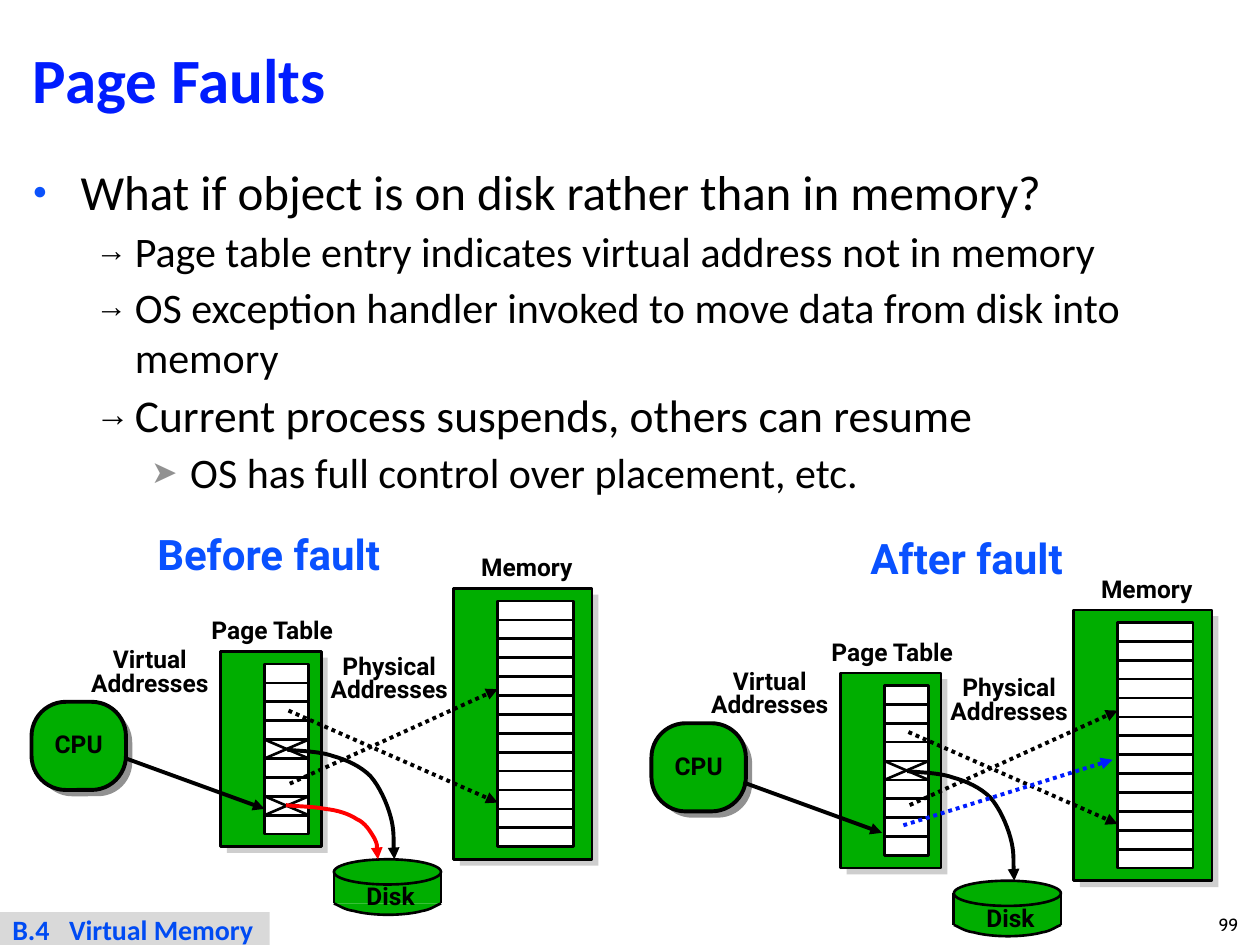
from lxml import etree
from pptx import Presentation
from pptx.dml.color import RGBColor
from pptx.enum.dml import MSO_LINE
from pptx.enum.shapes import MSO_CONNECTOR, MSO_SHAPE
from pptx.enum.text import MSO_ANCHOR, MSO_AUTO_SIZE, PP_ALIGN
from pptx.oxml.ns import qn
from pptx.util import Inches, Pt

RECT, ROUNDED, OVAL = MSO_SHAPE.RECTANGLE, MSO_SHAPE.ROUNDED_RECTANGLE, MSO_SHAPE.OVAL
LEFT, CENTER = PP_ALIGN.LEFT, PP_ALIGN.CENTER
MIDDLE = MSO_ANCHOR.MIDDLE
FIT_SHAPE, NO_FIT = MSO_AUTO_SIZE.SHAPE_TO_FIT_TEXT, MSO_AUTO_SIZE.NONE
DOTTED = MSO_LINE.ROUND_DOT

THEME = {
    "ink": "000000", "white": "FFFFFF", "green": "00AE00", "red": "FF0000",
    "title": "001CFE", "heading": "0951FF", "footer": "004BF3", "footer_fill": "D9D9D9",
    "cpu_shadow": "919191", "box_shadow": "CECECE",
    "text_font": "Calibri", "diagram_font": "Roboto", "number_font": "Cabin",
    "title_size": 36, "heading_size": 24, "label_size": 14,
    "footer_size": 16, "number_size": 10,
    "thin": 1.5, "thick": 2.25,
}

TITLE = "Page Faults"
BULLETS = [  # level, type size, text
    (0, 28, "What if object is on disk rather than in memory?"),
    (1, 24, "Page table entry indicates virtual address not in memory"),
    (1, 24, "OS exception handler invoked to move data from disk into memory"),
    (1, 26, "Current process suspends, others can resume"),
    (2, 24, "OS has full control over placement, etc."),
]
BULLET_STYLES = [  # left margin, hanging indent, mark, colour, percent of text size
    (0.38, 0.38, "●", "0B52FC", 50),
    (0.81, 0.31, "→", "000000", 75),
    (1.25, 0.31, "➤", "919191", 75),
]
FOOTER = "B.4\tVirtual Memory"
PAGE_NUMBER = "99"

# Diagram parts are placed as in the left panel; the right one is shifted.
LABELS = [  # text, box, line spacing
    ("Memory", (3.72, 4.36, 0.94, 0.31), 0.9),
    ("Page Table", (1.58, 4.86, 1.22, 0.31), 0.9),
    ("Disk", (2.81, 6.97, 0.61, 0.31), 0.9),
    ("Virtual\nAddresses", (0.59, 5.11, 1.2, 0.48), 0.8),
    ("Physical\nAddresses", (2.49, 5.16, 1.2, 0.48), 0.8),
]
STORES = [  # box, first cell, number of cells
    ((3.6, 4.67, 1.1, 2.15), (3.95, 4.77, 0.6, 0.15), 13),
    ((1.75, 5.17, 0.8, 1.55), (2.1, 5.27, 0.35, 0.15), 9),
]
MAPPINGS = [((2.29, 5.64), (3.95, 6.37)), ((2.3, 6.22), (3.95, 5.47))]
DISK = (2.65, 6.82, 0.85, 0.2)
DISK_SIDE = 0.25
DISK_BOTTOM = [(2.65, 7.17), (2.68, 7.18), (2.73, 7.22), (2.81, 7.23), (2.88, 7.25),
               (2.99, 7.26), (3.08, 7.26), (3.17, 7.26), (3.28, 7.25), (3.35, 7.23),
               (3.42, 7.22), (3.47, 7.18), (3.5, 7.17)]
DISK_LINK = [(2.28, 5.95), (2.34, 5.96), (2.53, 5.96), (2.64, 6), (2.75, 6.03),
             (2.86, 6.08), (2.94, 6.16), (3.01, 6.24), (3.07, 6.37), (3.1, 6.48),
             (3.13, 6.59), (3.12, 6.75), (3.13, 6.82)]
FAULT_LINK = [(2.27, 6.39), (2.33, 6.4), (2.49, 6.4), (2.58, 6.42), (2.68, 6.43),
              (2.77, 6.46), (2.83, 6.5), (2.9, 6.53), (2.94, 6.6), (2.97, 6.65),
              (3, 6.71), (2.99, 6.78), (3, 6.82)]
PANELS = [
    {"heading": "Before fault", "heading_box": (1.15, 4.19, 2.07, 0.46), "shift": (0, 0),
     "absent_rows": [4, 7], "links": [(DISK_LINK, "ink"), (FAULT_LINK, "red")],
     "new_mapping": None, "lookup": ((1, 6.02), (2.1, 6.42))},
    {"heading": "After fault", "heading_box": (6.81, 4.22, 1.79, 0.46), "shift": (4.92, 0.17),
     "absent_rows": [4], "links": [(DISK_LINK, "ink")],
     "new_mapping": ((7.17, 6.55), (8.83, 6.03)), "lookup": ((5.9, 6.21), (7, 6.61))},
]


def rgb(colour):
    return RGBColor.from_string(THEME.get(colour, colour))


def moved(box, shift):
    return (box[0] + shift[0], box[1] + shift[1], *box[2:])


def style_text(frame, font, size, colour, bold=False, align=LEFT, spacing=None):
    for paragraph in frame.paragraphs:
        paragraph.alignment = align
        if spacing:
            paragraph.line_spacing = spacing
        for run in paragraph.runs:
            run.font.name, run.font.size, run.font.bold = font, Pt(size), bold
            run.font.color.rgb = rgb(colour)


def style_line(line, colour, width, arrow=False):
    line.color.rgb = rgb(colour)
    line.width = Pt(width)
    if arrow:
        etree.SubElement(line._get_or_add_ln(), qn("a:tailEnd"), type="triangle")


def add_box(kind, box, fill, width=None):
    shape = slide.shapes.add_shape(kind, *map(Inches, box))
    shape.shadow.inherit = False
    shape.fill.solid()
    shape.fill.fore_color.rgb = rgb(fill)
    if width:
        style_line(shape.line, "ink", width)
    else:
        shape.line.fill.background()
    if kind == ROUNDED:
        shape.adjustments[0] = 0.39
    return shape


def add_line(start, end, width, colour="ink", dotted=False, arrow=False):
    line = slide.shapes.add_connector(MSO_CONNECTOR.STRAIGHT, *map(Inches, (*start, *end)))
    if dotted:
        line.line.dash_style = DOTTED
    style_line(line.line, colour, width, arrow)
    etree.SubElement(line._element.spPr, qn("a:effectLst"))


def add_curve(points, shift, colour, width, fill=None, arrow=False):
    """Draw a start point followed by triples of cubic Bezier points."""
    start, *rest = [tuple(map(Inches, moved(point, shift))) for point in points]
    builder = slide.shapes.build_freeform(*start)
    builder.add_line_segments(rest, close=False)
    curve = builder.convert_to_shape()
    curve.shadow.inherit = False
    outline = next(curve._element.iter(qn("a:path")))
    segments = outline.findall(qn("a:lnTo"))
    for first in range(0, len(segments), 3):
        bezier = etree.SubElement(outline, qn("a:cubicBezTo"))
        for segment in segments[first:first + 3]:
            bezier.append(segment[0])
            outline.remove(segment)
    if fill:
        curve.fill.solid()
        curve.fill.fore_color.rgb = rgb(fill)
    else:
        curve.fill.background()
    style_line(curve.line, colour, width, arrow)


def add_label(text, box, size, colour, align=LEFT, spacing=0.9):
    frame = slide.shapes.add_textbox(*map(Inches, box)).text_frame
    frame.text = text
    frame.word_wrap = False
    frame.auto_size = FIT_SHAPE
    style_text(frame, THEME["diagram_font"], size, colour, True, align, spacing)


def add_panel(panel):
    shift = panel["shift"]
    thin, thick = THEME["thin"], THEME["thick"]
    cpu_box = moved((0.25, 5.57, 0.75, 0.7), shift)
    add_box(ROUNDED, moved(cpu_box, (0.05, 0.05)), "cpu_shadow")
    cpu = add_box(ROUNDED, cpu_box, "green", thick).text_frame
    cpu.text, cpu.word_wrap, cpu.vertical_anchor = "CPU", False, MIDDLE
    style_text(cpu, THEME["diagram_font"], THEME["label_size"], "ink", True, CENTER, 0.9)

    for box, cell, count in STORES:
        store = moved(box, shift)
        add_box(RECT, moved(store, (0.05, 0.05)), "box_shadow")
        add_box(RECT, store, "green", thin)
        for row in range(count):
            add_box(RECT, moved(moved(cell, shift), (0, row * cell[3])), "white", thin)
    for start, end in MAPPINGS:
        add_line(moved(start, shift), moved(end, shift), thick, dotted=True, arrow=True)
    left, top, width, height = moved(STORES[1][1], shift)
    for row in panel["absent_rows"]:
        upper, lower = top + row * height, top + (row + 1) * height
        add_line((left, lower), (left + width, upper), thin)
        add_line((left + width, lower), (left, upper), thin)

    left, top, width, height = moved(DISK, shift)
    side_top = top + height / 2
    add_box(RECT, (left, side_top, width, DISK_SIDE), "green")
    add_box(OVAL, (left, top, width, height), "green", thin)
    for side in (left, left + width):
        add_line((side, side_top), (side, side_top + DISK_SIDE), thin)
    add_curve(DISK_BOTTOM, shift, "ink", thin, fill="green")
    for points, colour in panel["links"]:
        add_curve(points, shift, colour, thick, arrow=True)

    for text, box, spacing in LABELS:
        align = CENTER if "\n" in text else LEFT
        add_label(text, moved(box, shift), THEME["label_size"], "ink", align, spacing)
    if panel["new_mapping"]:
        add_line(*panel["new_mapping"], thick, "title", dotted=True, arrow=True)
    add_label(panel["heading"], panel["heading_box"], THEME["heading_size"], "heading")
    add_line(*panel["lookup"], thick, arrow=True)


def fill_placeholder(placeholder, box, text):
    placeholder.left, placeholder.top, placeholder.width, placeholder.height = map(Inches, box)
    placeholder.text_frame.text = text
    placeholder.text_frame.auto_size = NO_FIT
    return placeholder.text_frame


def format_bullet(paragraph, level, size):
    margin, hanging, mark, colour, percent = BULLET_STYLES[level]
    paragraph.level = level
    paragraph.space_before, paragraph.space_after = Pt(0), Pt(3)
    properties = paragraph._p.get_or_add_pPr()
    properties.set("marL", str(Inches(margin)))
    properties.set("indent", str(-Inches(hanging)))
    bullet_colour = etree.SubElement(properties, qn("a:buClr"))
    etree.SubElement(bullet_colour, qn("a:srgbClr"), val=colour)
    etree.SubElement(properties, qn("a:buSzPct"), val=str(percent * 1000))
    etree.SubElement(properties, qn("a:buChar"), char=mark)
    for run in paragraph.runs:
        run.font.size = Pt(size)


deck = Presentation()
deck.slide_width, deck.slide_height = Inches(10), Inches(7.5)
slide = deck.slides.add_slide(deck.slide_layouts[1])

title = fill_placeholder(slide.shapes.title, (0.16, 0.16, 9.68, 1.01), TITLE)
title.vertical_anchor = MIDDLE
style_text(title, THEME["text_font"], THEME["title_size"], "title", True, spacing=0.87)
body = fill_placeholder(slide.placeholders[1], (0.16, 1.23, 9.68, 5.95),
                        "\n".join(text for _, _, text in BULLETS))
style_text(body, THEME["text_font"], BULLETS[0][1], "ink")
for item, (item_level, item_size, _) in zip(body.paragraphs, BULLETS):
    format_bullet(item, item_level, item_size)

for fault_panel in PANELS:
    add_panel(fault_panel)

number = slide.shapes.add_textbox(*map(Inches, (9.5, 7.17, 0.5, 0.33))).text_frame
number.text, number.vertical_anchor = PAGE_NUMBER, MIDDLE
style_text(number, THEME["number_font"], THEME["number_size"], "ink", align=CENTER)
footer = add_box(RECT, (0, 7.24, 2.14, 0.27), "footer_fill").text_frame
footer.text, footer.vertical_anchor = FOOTER, MIDDLE
footer.margin_top = footer.margin_bottom = 0
tabs = etree.SubElement(footer.paragraphs[0]._p.get_or_add_pPr(), qn("a:tabLst"))
etree.SubElement(tabs, qn("a:tab"), pos=str(Inches(0.45)), algn="l")
style_text(footer, THEME["text_font"], THEME["footer_size"], "footer", True)

deck.save("out.pptx")
